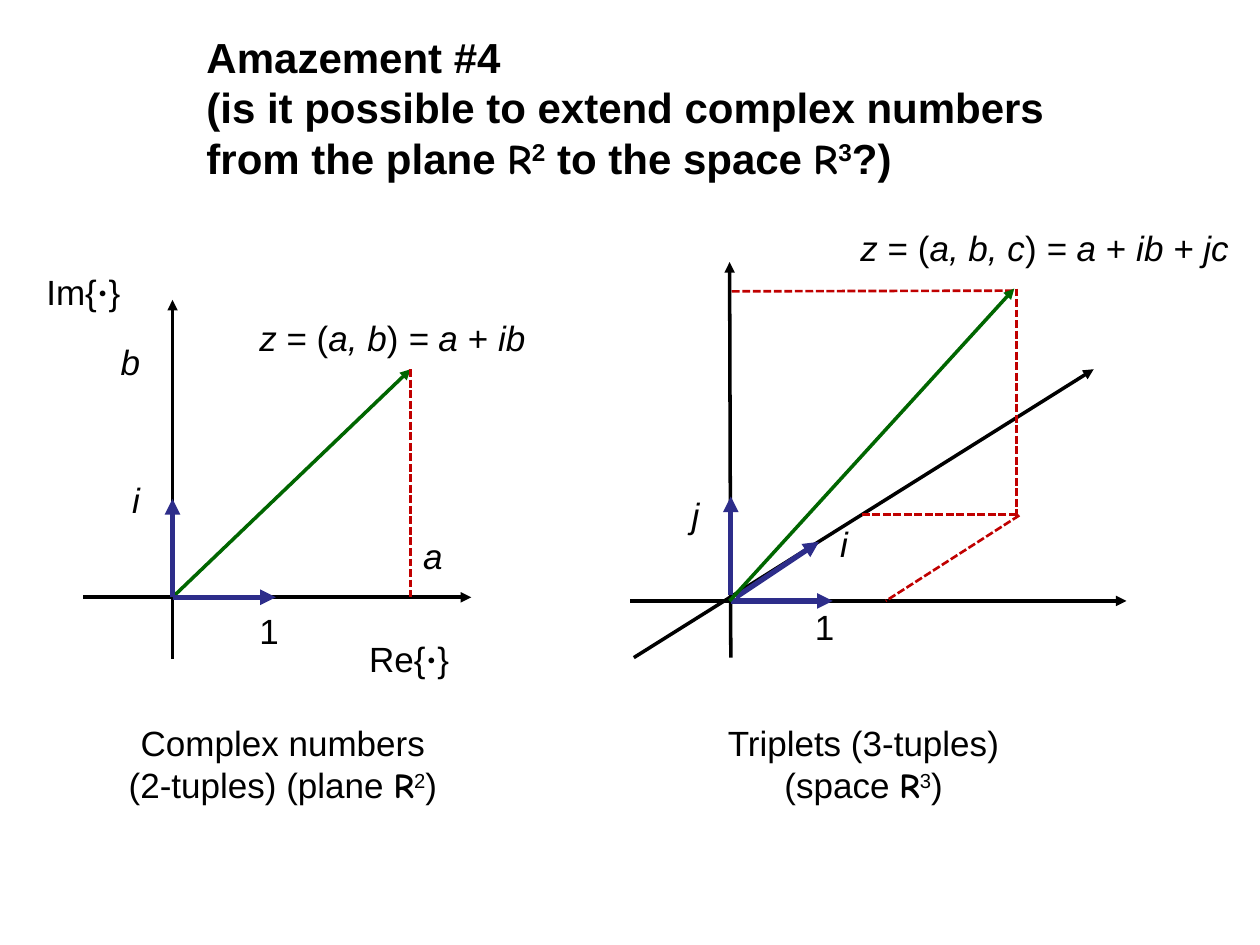
from typing import NamedTuple, Optional

import pptx
import pptx.dml.color
import pptx.enum.dml
import pptx.enum.shapes
import pptx.enum.text
import pptx.oxml
import pptx.oxml.ns
import pptx.util
from pptx.util import Pt

BLACK = pptx.dml.color.RGBColor(0x00, 0x00, 0x00)
GREEN = pptx.dml.color.RGBColor(0x00, 0x66, 0x00)
RED = pptx.dml.color.RGBColor(0xC0, 0x00, 0x00)
BLUE = pptx.dml.color.RGBColor(0x2D, 0x2D, 0x8A)


class LineStyle(NamedTuple):
    color: pptx.dml.color.RGBColor
    width: float
    arrow: bool = True


AXIS = LineStyle(BLACK, 2)
VECTOR = LineStyle(GREEN, 2)
UNIT = LineStyle(BLUE, 3)
PROJECTION = LineStyle(RED, 1.5, arrow=False)


class Segment(NamedTuple):
    style: LineStyle
    start: tuple[float, float]
    end: tuple[float, float]


class Run(NamedTuple):
    text: str
    italic: bool = False
    bold: Optional[bool] = None
    font: str = "Arial"
    superscript: bool = False


class Label(NamedTuple):
    left: float
    top: float
    width: float
    paragraphs: list[list[Run]]
    height: float = 31.5
    size: float = 20
    bold: bool = False
    wrap: bool = False
    centered: bool = False


def italic(text: str) -> Run:
    return Run(text, italic=True)


def space_symbol(dimension: str) -> list[Run]:
    """The letter R with its dimension as a superscript."""
    return [Run("R", bold=True, font="Comic Neue"), Run(dimension, superscript=True)]


def part_name(name: str) -> list[Run]:
    """Name of the real or imaginary part, with a dot as its argument."""
    return [Run(name + "{"), Run("·", bold=True, font="Times New Roman"), Run("}")]


def number_formula(tuple_text: str, imaginary: str) -> list[Run]:
    return [italic("z"), Run(" = ("), italic(tuple_text), Run(")"),
            italic(" = a"), Run(" + "), italic(imaginary)]


TITLE = Label(110.9, 14.4, 601.2, [[
    Run("Amazement #4\n(is it possible to extend complex numbers\nfrom the plane "),
    *space_symbol("2"), Run(" to the space "), *space_symbol("3"), Run("?)"),
]], height=94.3, size=24, bold=True, wrap=True)

PLANE_ORIGIN = (98.6, 341.3)
PLANE_POINT = (234.7, 211)
PLANE_SEGMENTS = [
    Segment(AXIS, (98.6, 376.6), (98.6, 171.4)),
    Segment(AXIS, (47.5, 341.3), (269.3, 341.3)),
    Segment(VECTOR, PLANE_ORIGIN, PLANE_POINT),
    Segment(PROJECTION, PLANE_POINT, (234.7, 341.3)),
    Segment(UNIT, PLANE_ORIGIN, (157.7, 341.3)),
    Segment(UNIT, PLANE_ORIGIN, (98.6, 285.1)),
]
PLANE_LABELS = [
    Label(203.8, 360.7, 60.5, [part_name("Re")]),
    Label(19.4, 151.2, 56.9, [part_name("Im")]),
    Label(141.1, 177.1, 167, [number_formula("a, b", "ib")]),
    Label(61.9, 190.8, 25.9, [[italic("b")]]),
    Label(234.7, 301.7, 25.9, [[italic("a")]]),
    Label(141.1, 344.9, 25.9, [[Run("1")]]),
    Label(68.4, 270, 19.4, [[italic("i")]]),
    Label(64.8, 409, 193.7, [
        [Run("Complex numbers")],
        [Run("(2-tuples) (plane "), *space_symbol("2"), Run(")")],
    ], height=55.4, centered=True),
]

SPACE_SEGMENTS = [
    Segment(PROJECTION, (578.9, 166.1), (417.6, 166.5)),
    Segment(AXIS, (360, 343.4), (643.7, 343.4)),
    Segment(AXIS, (417.6, 375.8), (416.9, 149.8)),
    Segment(AXIS, (362.2, 375.8), (625, 211)),
    Segment(UNIT, (417.6, 343.4), (475.9, 343.4)),
    Segment(UNIT, (417.6, 339.8), (417.6, 283.7)),
    Segment(UNIT, (420.5, 341.3), (468, 309.6)),
    Segment(PROJECTION, (581, 294.1), (492.5, 294.1)),
    Segment(PROJECTION, (582.5, 294.5), (506.2, 343.4)),
    Segment(PROJECTION, (581, 164.9), (581, 295.2)),
    Segment(VECTOR, (416.9, 343.4), (579.6, 164.9)),
]
SPACE_LABELS = [
    Label(458.6, 342.7, 25.9, [[Run("1")]]),
    Label(473, 295.2, 19.4, [[italic("i")]]),
    Label(388.1, 278.6, 19.4, [[italic("j")]]),
    Label(408.2, 409, 170.6, [
        [Run("Triplets (3-tuples)")],
        [Run("(space "), *space_symbol("3"), Run(")")],
    ], height=55.4, centered=True),
    Label(484.6, 126, 226.1, [number_formula("a, b, c", "ib + jc")]),
]


def add_run(paragraph, run: Run) -> None:
    for index, text in enumerate(run.text.split("\n")):
        if index:
            paragraph.add_line_break()
        text_run = paragraph.add_run()
        text_run.text = text
        text_run.font.name = run.font
        if run.italic:
            text_run.font.italic = True
        if run.bold is not None:
            text_run.font.bold = run.bold
        if run.superscript:
            text_run._r.get_or_add_rPr().set("baseline", "30000")


def add_label(shapes, label: Label) -> None:
    box = shapes.add_textbox(Pt(label.left), Pt(label.top), Pt(label.width), Pt(label.height))
    frame = box.text_frame
    frame.word_wrap = label.wrap
    frame.auto_size = pptx.enum.text.MSO_AUTO_SIZE.SHAPE_TO_FIT_TEXT
    for index, runs in enumerate(label.paragraphs):
        paragraph = frame.add_paragraph() if index else frame.paragraphs[0]
        paragraph.font.size = Pt(label.size)
        paragraph.font.bold = label.bold
        paragraph.font.color.rgb = BLACK
        if label.centered:
            paragraph.alignment = pptx.enum.text.PP_ALIGN.CENTER
        for run in runs:
            add_run(paragraph, run)


def add_segment(shapes, segment: Segment) -> None:
    connector = shapes.add_connector(
        pptx.enum.shapes.MSO_CONNECTOR.STRAIGHT,
        *(Pt(length) for length in segment.start + segment.end))
    line = connector.line
    line.color.rgb = segment.style.color
    line.width = Pt(segment.style.width)
    if segment.style.arrow:
        arrowhead = pptx.oxml.parse_xml(
            f'<a:tailEnd {pptx.oxml.ns.nsdecls("a")} type="triangle"/>')
        line._get_or_add_ln().append(arrowhead)
    else:
        line.dash_style = pptx.enum.dml.MSO_LINE.SQUARE_DOT
    no_effects = pptx.oxml.parse_xml(f'<a:effectLst {pptx.oxml.ns.nsdecls("a")}/>')
    connector._element.spPr.append(no_effects)


def add_diagram(shapes, segments: list[Segment], labels: list[Label]) -> None:
    for segment in segments:
        add_segment(shapes, segment)
    for label in labels:
        add_label(shapes, label)


def main() -> None:
    presentation = pptx.Presentation()
    presentation.slide_width = Pt(720)
    presentation.slide_height = Pt(540)
    slide = presentation.slides.add_slide(presentation.slide_layouts[6])
    add_label(slide.shapes, TITLE)
    add_diagram(slide.shapes, PLANE_SEGMENTS, PLANE_LABELS)
    add_diagram(slide.shapes.add_group_shape().shapes, SPACE_SEGMENTS, SPACE_LABELS)
    presentation.save("out.pptx")


if __name__ == "__main__":
    main()
